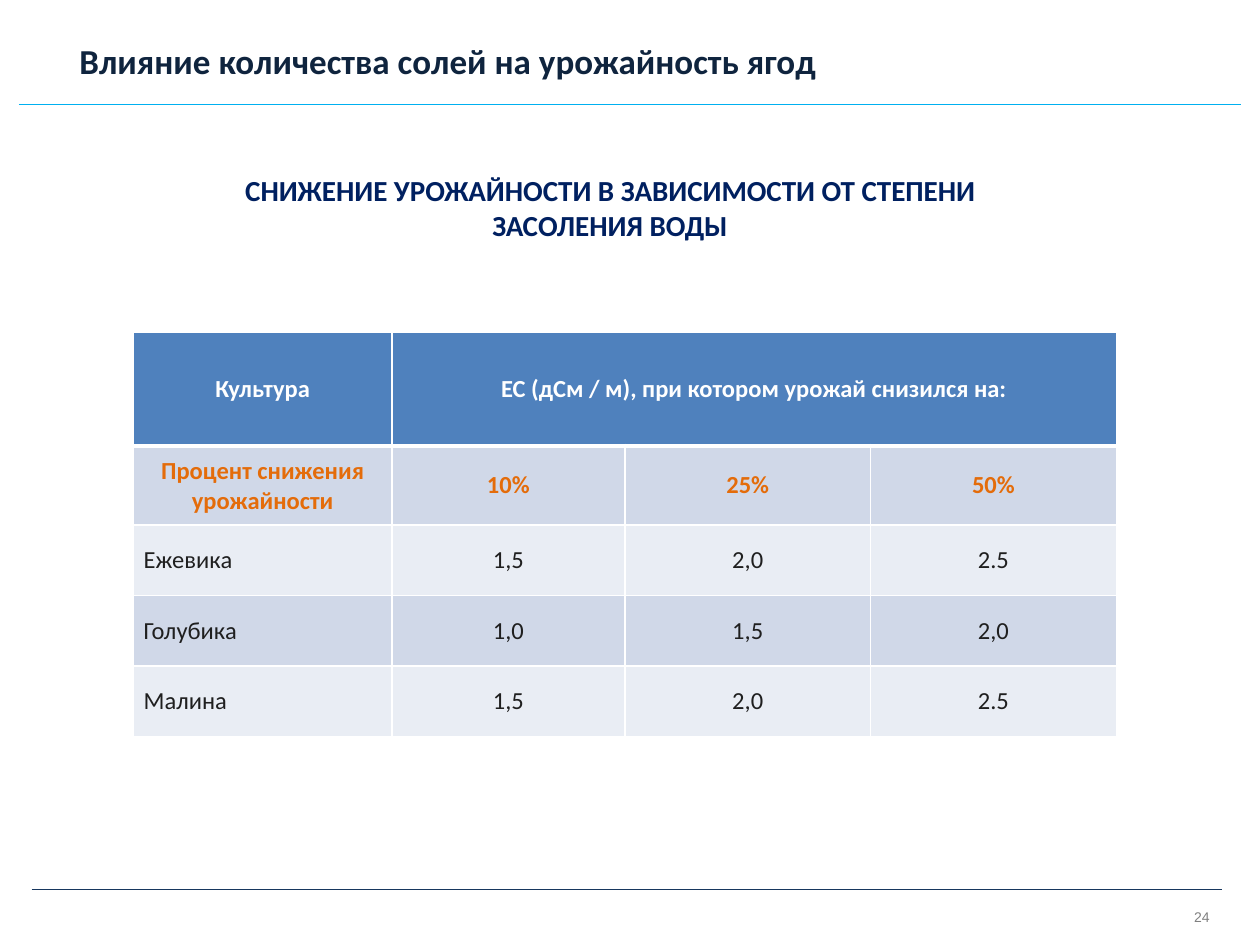
"""Build a slide on how water salinity lowers berry yields."""
from dataclasses import dataclass

from lxml import etree
from pptx import Presentation
from pptx.dml.color import RGBColor
from pptx.enum.shapes import MSO_CONNECTOR
from pptx.enum.text import MSO_ANCHOR, PP_ALIGN
from pptx.oxml.ns import qn
from pptx.util import Inches, Pt

LEFT, CENTER, RIGHT = PP_ALIGN.LEFT, PP_ALIGN.CENTER, PP_ALIGN.RIGHT
TOP, MIDDLE = MSO_ANCHOR.TOP, MSO_ANCHOR.MIDDLE
STRAIGHT = MSO_CONNECTOR.STRAIGHT


@dataclass(frozen=True)
class TextStyle:
    """Look of one kind of text."""
    size: float
    color: str
    bold: bool = True
    font: str = "Calibri"


@dataclass(frozen=True)
class Theme:
    """Colours and type styles of the slide."""
    title: TextStyle = TextStyle(20, "0F243E")
    subtitle: TextStyle = TextStyle(16.6, "002060")
    header: TextStyle = TextStyle(14, "FFFFFF")
    percent: TextStyle = TextStyle(14, "E46C0A")
    body: TextStyle = TextStyle(14, "1F1F1F", bold=False)
    number: TextStyle = TextStyle(8, "808080", bold=False, font="Arial")
    top_rule: str = "00B0F0"
    bottom_rule: str = "17375E"
    header_fill: str = "4F81BD"
    bands: tuple[str, str] = ("D0D8E8", "E9EDF4")
    border: str = "FFFFFF"


@dataclass(frozen=True)
class Rule:
    """Horizontal line across the slide."""
    left: float
    right: float
    y: float
    color: str


@dataclass(frozen=True)
class TableRow:
    """Table row with its height and look."""
    labels: tuple[str, ...]
    height: float
    style: TextStyle
    fill: str
    label_align: PP_ALIGN = CENTER
    top_border: float = 1
    bottom_border: float = 1


THEME = Theme()
RULES = (
    Rule(0.15, 9.85, 0.83, THEME.top_rule),
    Rule(0.25, 9.7, 7.06, THEME.bottom_rule),
)
COLUMN_WIDTHS = (2.05, 1.85, 1.95, 1.95)
CROPS = (
    ("Ежевика", "1,5", "2,0", "2.5"),
    ("Голубика", "1,0", "1,5", "2,0"),
    ("Малина", "1,5", "2,0", "2.5"),
)
ROWS = (
    TableRow(("Культура", "EC (дСм / м), при котором урожай снизился на:"),
             0.9, THEME.header, THEME.header_fill, bottom_border=3),
    TableRow(("Процент снижения урожайности", "10%", "25%", "50%"),
             0.56, THEME.percent, THEME.bands[0], top_border=3),
    *(TableRow(crop, 0.56, THEME.body, THEME.bands[index % 2], LEFT)
      for index, crop in enumerate(CROPS, start=1)),
)


def write(frame, text: str, style: TextStyle, align: PP_ALIGN) -> None:
    """Put one styled run into the first paragraph of a frame."""
    paragraph = frame.paragraphs[0]
    paragraph.alignment = align
    paragraph.space_before = Pt(0)
    run = paragraph.add_run()
    run.text = text
    run.font.name = style.font
    run.font.size = Pt(style.size)
    run.font.bold = style.bold
    run.font.color.rgb = RGBColor.from_string(style.color)


def add_title(slide, text: str) -> None:
    """Place and fill the title placeholder."""
    title = slide.shapes.title
    title.left, title.top = Inches(0.59), Inches(0.31)
    title.width, title.height = Inches(6.56), Inches(0.34)
    frame = title.text_frame
    frame.vertical_anchor = MIDDLE
    frame.margin_left = Inches(0.04)
    frame.margin_top = frame.margin_right = frame.margin_bottom = 0
    write(frame, text, THEME.title, LEFT)


def add_label(slide, box: tuple[float, ...], text: str,
              style: TextStyle, align: PP_ALIGN) -> None:
    """Add a wrapping text box."""
    frame = slide.shapes.add_textbox(*map(Inches, box)).text_frame
    frame.word_wrap = True
    frame.vertical_anchor = TOP
    write(frame, text, style, align)


def add_rule(slide, rule: Rule) -> None:
    """Draw a thin line without a shadow."""
    line = slide.shapes.add_connector(
        STRAIGHT, Inches(rule.left), Inches(rule.y),
        Inches(rule.right), Inches(rule.y))
    line.line.color.rgb = RGBColor.from_string(rule.color)
    line.line.width = Pt(0.75)
    etree.SubElement(line._element.spPr, qn("a:effectLst"))


def add_borders(cell, row: TableRow) -> None:
    """Give a cell its four solid borders."""
    properties = cell._tc.get_or_add_tcPr()
    widths = {"lnL": 1, "lnR": 1, "lnT": row.top_border,
              "lnB": row.bottom_border}
    for side, width in widths.items():
        border = etree.SubElement(properties, qn(f"a:{side}"), w=str(Pt(width)))
        fill = etree.SubElement(border, qn("a:solidFill"))
        etree.SubElement(fill, qn("a:srgbClr"), val=THEME.border)


def style_cell(cell, row: TableRow) -> None:
    """Set margins, anchor, borders and fill of a cell."""
    cell.margin_left = cell.margin_right = Inches(0.08)
    cell.margin_top = cell.margin_bottom = Inches(0.08)
    cell.vertical_anchor = MIDDLE
    add_borders(cell, row)
    cell.fill.solid()
    cell.fill.fore_color.rgb = RGBColor.from_string(row.fill)


def add_yield_table(slide) -> None:
    """Add the table of salinity thresholds."""
    table = slide.shapes.add_table(
        len(ROWS), len(COLUMN_WIDTHS), Inches(1.06), Inches(2.64),
        Inches(sum(COLUMN_WIDTHS)),
        Inches(sum(row.height for row in ROWS))).table
    for column, width in zip(table.columns, COLUMN_WIDTHS):
        column.width = Inches(width)
    table.cell(0, 1).merge(table.cell(0, len(COLUMN_WIDTHS) - 1))
    for row, table_row in zip(ROWS, table.rows):
        table_row.height = Inches(row.height)
        for cell in table_row.cells:
            style_cell(cell, row)
        for index, (label, cell) in enumerate(zip(row.labels, table_row.cells)):
            align = CENTER if index else row.label_align
            write(cell.text_frame, label, row.style, align)


def main() -> None:
    """Build and save the slide."""
    presentation = Presentation()
    presentation.slide_width = Inches(10)
    presentation.slide_height = Inches(7.5)
    slide = presentation.slides.add_slide(presentation.slide_layouts[5])
    add_label(slide, (7.37, 7.16, 2.33, 0.4), "24", THEME.number, RIGHT)
    for rule in RULES:
        add_rule(slide, rule)
    add_title(slide, "Влияние количества солей на урожайность ягод")
    add_label(slide, (1.77, 1.32, 6.14, 0.66),
              "СНИЖЕНИЕ УРОЖАЙНОСТИ В ЗАВИСИМОСТИ ОТ СТЕПЕНИ ЗАСОЛЕНИЯ ВОДЫ",
              THEME.subtitle, CENTER)
    add_yield_table(slide)
    presentation.save("out.pptx")


if __name__ == "__main__":
    main()
